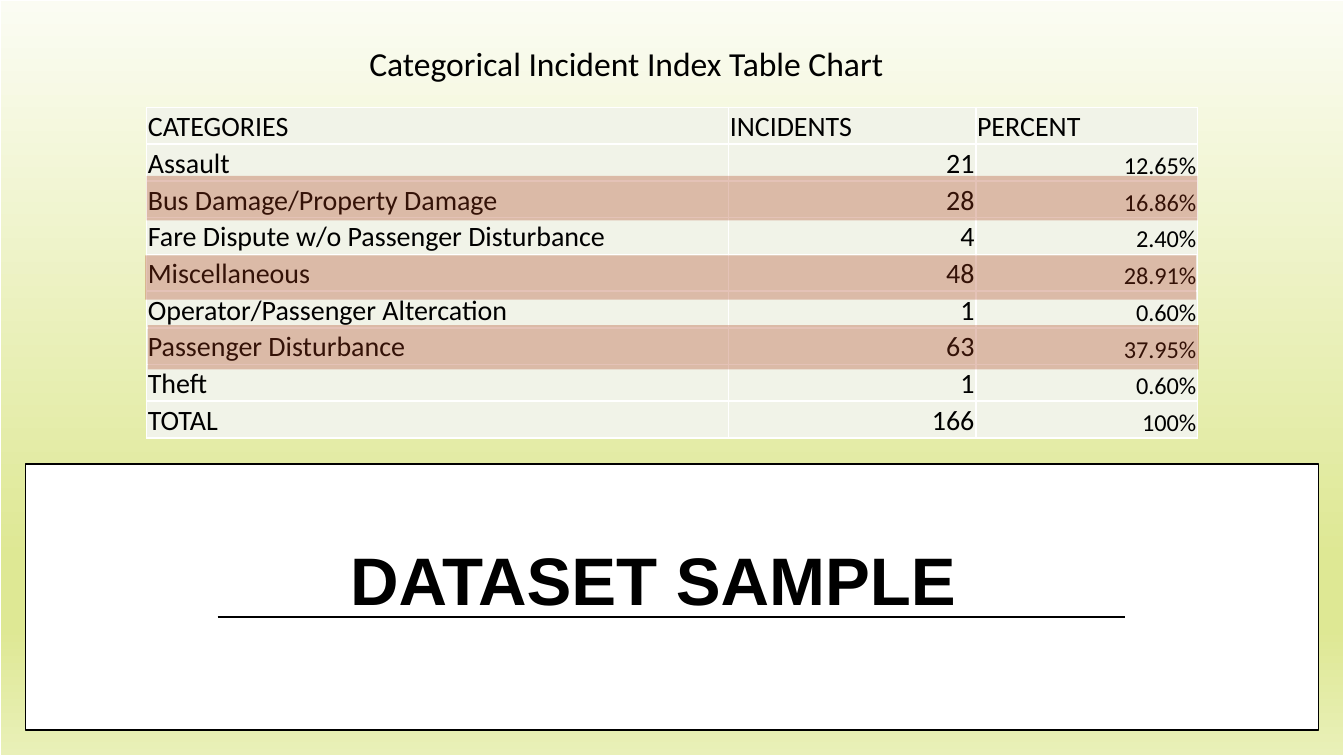
import pptx
import pptx.util
import pptx.dml.color
import pptx.enum.shapes
import pptx.enum.text
from lxml import etree
from pptx.oxml.ns import qn

Inches, Pt = pptx.util.Inches, pptx.util.Pt
RGBColor = pptx.dml.color.RGBColor
ALIGN = pptx.enum.text.PP_ALIGN
ANCHOR = pptx.enum.text.MSO_ANCHOR

BLACK = RGBColor(0x00, 0x00, 0x00)
WHITE = RGBColor(0xFF, 0xFF, 0xFF)
CELL = RGBColor(0xF1, 0xF3, 0xE8)
RUST = RGBColor(0xAB, 0x3C, 0x19)
GRADIENT = [(0, RGBColor(0xFB, 0xFC, 0xF3)), (74, RGBColor(0xDE, 0xE8, 0x94)),
            (83, RGBColor(0xDE, 0xE8, 0x94)), (100, RGBColor(0xE9, 0xF0, 0xB8))]

# Content
SLIDE_WIDTH = 10
SLIDE_HEIGHT = SLIDE_WIDTH * 9 / 16
TITLE = "DATASET SAMPLE"
CAPTION = "Categorical Incident Index Table Chart"
ROWS = [
    ("CATEGORIES", "INCIDENTS", "PERCENT"),
    ("Assault", "21", "12.65%"),
    ("Bus Damage/Property Damage", "28", "16.86%"),
    ("Fare Dispute w/o Passenger Disturbance", "4", "2.40%"),
    ("Miscellaneous", "48", "28.91%"),
    ("Operator/Passenger Altercation", "1", "0.60%"),
    ("Passenger Disturbance", "63", "37.95%"),
    ("Theft", "1", "0.60%"),
    ("TOTAL", "166", "100%"),
]
COLUMN_WIDTHS = [4.33, 1.84, 1.65]
TABLE_BOX = (1.09, 0.8, 7.82, 2.46)
HIGHLIGHTS = [(1.09, 1.31), (1.1, 2.42), (1.08, 1.9)]


def add_rectangle(page, box, color=None, line=None):
    shape = page.shapes.add_shape(pptx.enum.shapes.MSO_SHAPE.RECTANGLE, *map(Inches, box))
    shape.shadow.inherit = False
    if color is not None:
        shape.fill.solid()
        shape.fill.fore_color.rgb = color
    if line is None:
        shape.line.fill.background()
    else:
        shape.line.color.rgb = line
        shape.line.width = Pt(1)
    return shape


def set_stops(gradient):
    stops = gradient.find(qn("a:gsLst"))
    for stop in list(stops):
        stops.remove(stop)
    for percent, color in GRADIENT:
        stop = etree.SubElement(stops, qn("a:gs"), pos=str(percent * 1000))
        etree.SubElement(stop, qn("a:srgbClr"), val=str(color))


def add_borders(cell):
    properties = cell._tc.get_or_add_tcPr()
    for position, side in enumerate(("lnL", "lnR", "lnT", "lnB")):
        border = etree.Element(qn("a:" + side), w=str(Pt(1)))
        fill = etree.SubElement(border, qn("a:solidFill"))
        etree.SubElement(fill, qn("a:srgbClr"), val=str(WHITE))
        properties.insert(position, border)


def style_cell(cell, text, is_header, column):
    cell.text = text
    cell.fill.solid()
    cell.fill.fore_color.rgb = CELL
    cell.vertical_anchor = ANCHOR.BOTTOM
    cell.margin_left = cell.margin_right = cell.margin_top = Inches(0.01)
    cell.margin_bottom = 0
    para = cell.text_frame.paragraphs[0]
    para.alignment = ALIGN.LEFT if is_header or column == 0 else ALIGN.RIGHT
    para.font.name = "Calibri"
    para.font.size = Pt(13 if column == 2 and not is_header else 15)
    para.font.bold = False
    para.font.color.rgb = BLACK
    add_borders(cell)


deck = pptx.Presentation()
deck.slide_width, deck.slide_height = Inches(SLIDE_WIDTH), Inches(SLIDE_HEIGHT)
page = deck.slides.add_slide(deck.slide_layouts[5])

# Gradient background and framed backdrop
backdrop = add_rectangle(page, (0, 0, SLIDE_WIDTH, SLIDE_HEIGHT), line=WHITE)
for fill in (page.background.fill, backdrop.fill):
    fill.gradient()
    fill.gradient_angle = 270
for gradient in page.element.iter(qn("a:gradFill")):
    set_stops(gradient)

# Title panel with its rule
add_rectangle(page, (0.19, 3.45, 9.62, 1.98), WHITE, BLACK)
rule = page.shapes.add_connector(pptx.enum.shapes.MSO_CONNECTOR.STRAIGHT,
                                 *map(Inches, (1.62, 4.59, 8.37, 4.59)))
rule.line.color.rgb = BLACK
rule.line.width = Pt(0.79)
etree.SubElement(rule._element.spPr, qn("a:effectLst"))

# Title, raised above the panel
title = page.shapes.title
title.element.getparent().append(title.element)
title.left, title.top, title.width, title.height = map(Inches, (0.91, 3.57, 8.18, 1.09))
frame = title.text_frame
frame.text = TITLE
frame.word_wrap = True
frame.auto_size = pptx.enum.text.MSO_AUTO_SIZE.NONE
frame.vertical_anchor = ANCHOR.BOTTOM
frame.margin_right = Inches(0.38)
para = frame.paragraphs[0]
para.alignment = ALIGN.CENTER
para.line_spacing = 0.85
para.font.name = "Arial"
para.font.size = Pt(36)
para.font.bold = True
para.font.color.rgb = BLACK

# Incident table
table = page.shapes.add_table(len(ROWS), len(COLUMN_WIDTHS), *map(Inches, TABLE_BOX)).table
for column, width in zip(table.columns, COLUMN_WIDTHS):
    column.width = Inches(width)
for row_index, row in enumerate(ROWS):
    for column_index, text in enumerate(row):
        style_cell(table.cell(row_index, column_index), text, row_index == 0, column_index)

# Translucent bands over the largest categories
for left, top in HIGHLIGHTS:
    band = add_rectangle(page, (left, top, 7.82, 0.33), RUST)
    color = band.element.spPr.find(qn("a:solidFill")).find(qn("a:srgbClr"))
    etree.SubElement(color, qn("a:alpha"), val="31000")

# Table caption
caption = page.shapes.add_textbox(*map(Inches, (2.65, 0.27, 4.73, 0.4)))
caption.text_frame.word_wrap = True
caption.text_frame.auto_size = pptx.enum.text.MSO_AUTO_SIZE.SHAPE_TO_FIT_TEXT
caption.text_frame.text = CAPTION
para = caption.text_frame.paragraphs[0]
para.font.name = "Calibri"
para.font.size = Pt(18)
para.font.color.rgb = BLACK

deck.save("out.pptx")
